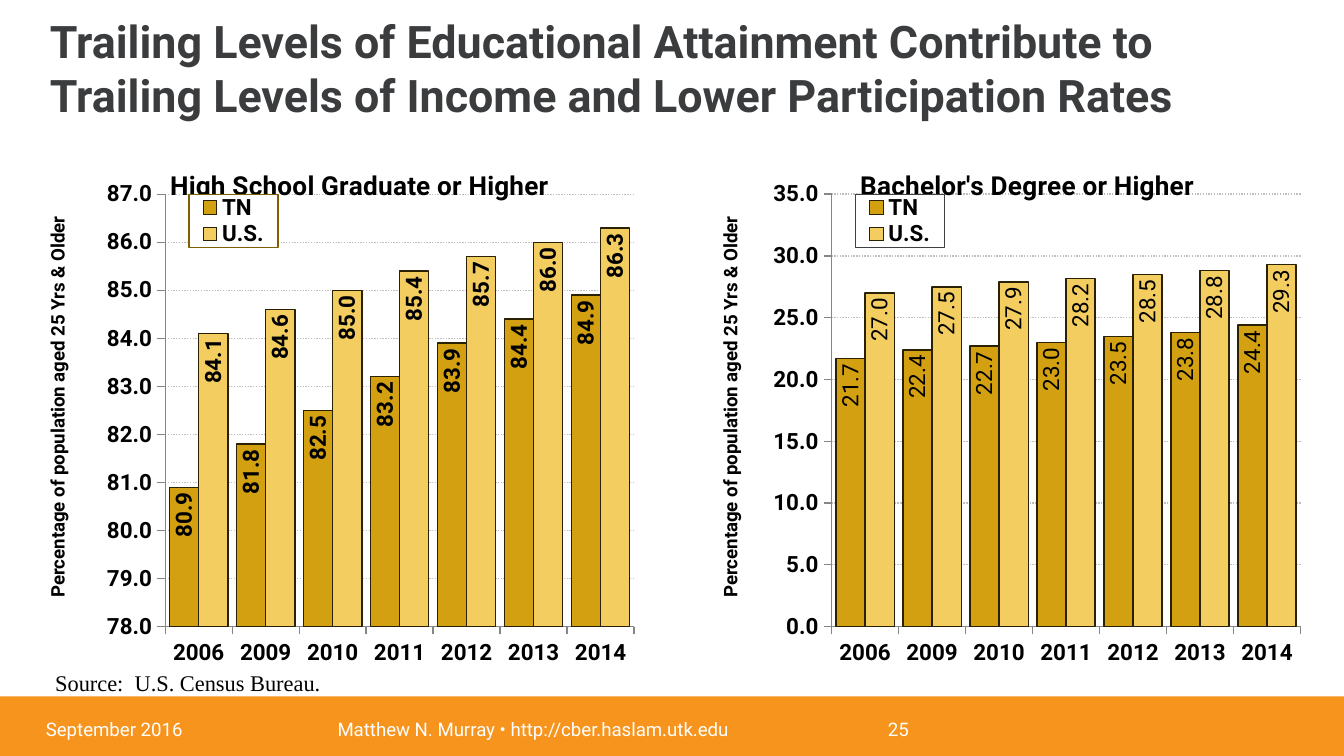
from pptx import Presentation
from pptx.chart.data import CategoryChartData
from pptx.dml.color import RGBColor
from pptx.enum.chart import XL_CHART_TYPE, XL_LABEL_POSITION, XL_LEGEND_POSITION, XL_TICK_MARK
from pptx.enum.dml import MSO_LINE
from pptx.enum.shapes import MSO_SHAPE
from pptx.enum.text import MSO_ANCHOR, MSO_AUTO_SIZE, PP_ALIGN
from pptx.oxml import parse_xml
from pptx.oxml.ns import nsdecls, qn
from pptx.util import Pt

COLUMNS = XL_CHART_TYPE.COLUMN_CLUSTERED
INSIDE_END = XL_LABEL_POSITION.INSIDE_END
LEGEND_TOP = XL_LEGEND_POSITION.TOP
TICK_OUT, TICK_NONE = XL_TICK_MARK.OUTSIDE, XL_TICK_MARK.NONE
DOTTED = MSO_LINE.ROUND_DOT
RECT = MSO_SHAPE.RECTANGLE
TOP, MIDDLE = MSO_ANCHOR.TOP, MSO_ANCHOR.MIDDLE
NO_FIT = MSO_AUTO_SIZE.NONE
LEFT, CENTER, RIGHT = PP_ALIGN.LEFT, PP_ALIGN.CENTER, PP_ALIGN.RIGHT


class Theme:
    font, serif = "Roboto", "Times New Roman"
    title, text = RGBColor(0x3B, 0x3C, 0x3E), RGBColor(0, 0, 0)
    white, footer = RGBColor(255, 255, 255), RGBColor(0xF7, 0x94, 0x1E)
    bars = RGBColor(0xD2, 0xA0, 0x10), RGBColor(0xF3, 0xCD, 0x60)
    outline, axis = RGBColor(0x2A, 0x20, 0x03), RGBColor(0x86, 0x86, 0x86)
    grid = RGBColor(0xBF, 0xBF, 0xBF)
    title_size, chart_title_size, chart_size, small_size = Pt(24), Pt(14), Pt(12), Pt(10)


def add_text(s, text, box, size, color, font=Theme.font, align=LEFT, anchor=TOP, bold=False):
    tf = s.shapes.add_textbox(*(Pt(v) for v in box)).text_frame
    tf.word_wrap = True
    tf.vertical_anchor = anchor
    p = tf.paragraphs[0]
    p.text = text
    p.alignment = align
    r = p.runs[0]
    r.font.name, r.font.size, r.font.bold = font, size, bold
    r.font.color.rgb = color
    return tf


def place(parent, index, **fractions):
    """Set a manual layout, in fractions of the chart, as child number index."""
    for old in parent.findall(qn("c:layout")):
        parent.remove(old)
    target = '<c:layoutTarget val="inner"/>' if parent.tag == qn("c:plotArea") else ""
    modes = '<c:xMode val="edge"/><c:yMode val="edge"/>'
    values = "".join(f'<c:{k} val="{v}"/>' for k, v in fractions.items())
    parent.insert(index, parse_xml(
        f'<c:layout {nsdecls("c")}><c:manualLayout>{target}{modes}{values}'
        '</c:manualLayout></c:layout>'))


prs = Presentation()
prs.slide_width, prs.slide_height = Pt(720), Pt(405)
s = prs.slides.add_slide(prs.slide_layouts[5])

# Footer band
band = s.shapes.add_shape(RECT, Pt(0), Pt(373), Pt(720), Pt(32))
band.shadow.inherit = False
band.fill.solid()
band.fill.fore_color.rgb = Theme.footer
band.line.fill.background()

# Title
title = s.shapes.title
title.left, title.top, title.width, title.height = Pt(19.5), Pt(2), Pt(682.5), Pt(68)
tf = title.text_frame
tf.text = ("Trailing Levels of Educational Attainment Contribute to "
           "Trailing Levels of Income and Lower Participation Rates")
tf.word_wrap, tf.auto_size, tf.vertical_anchor = True, NO_FIT, MIDDLE
p = tf.paragraphs[0]
p.alignment = LEFT
r = p.runs[0]
r.font.name, r.font.size, r.font.bold = Theme.font, Theme.title_size, True
r.font.color.rgb = Theme.title

# Charts: left, axis caption left, title, title x, axis range and step, bold labels, legend border, values
years = ["2006", "2009", "2010", "2011", "2012", "2013", "2014"]
panels = [
    (34.5, 21, "High School Graduate or Higher", 0.17, (78, 87, 1), True, RGBColor(0x7F, 0x60, 0),
     {"TN": (80.9, 81.8, 82.5, 83.2, 83.9, 84.4, 84.9),
      "U.S.": (84.1, 84.6, 85, 85.4, 85.7, 86, 86.3)}),
    (391.5, 381.5, "Bachelor's Degree or Higher", 0.21, (0, 35, 5), False, RGBColor(0x40, 0x40, 0x40),
     {"TN": (21.7, 22.4, 22.7, 23, 23.5, 23.8, 24.4),
      "U.S.": (27, 27.5, 27.9, 28.2, 28.5, 28.8, 29.3)}),
]
for left, caption_left, heading, heading_x, scale, bold_labels, border, values in panels:
    data = CategoryChartData(number_format="0.0")
    data.categories = years
    for name, numbers in values.items():
        data.add_series(name, numbers)
    chart = s.shapes.add_chart(COLUMNS, Pt(left), Pt(75.5), Pt(318), Pt(286), data).chart
    chart.font.name, chart.font.size = Theme.font, Theme.chart_size
    chart.font.color.rgb = Theme.text

    # Chart title over the plot
    chart.has_title = True
    p = chart.chart_title.text_frame.paragraphs[0]
    p.text = heading
    r = p.runs[0]
    r.font.name, r.font.size, r.font.bold = Theme.font, Theme.chart_title_size, True
    r.font.color.rgb = Theme.text
    title_xml = chart.element.xpath("c:chart/c:title")[0]
    title_xml.find(qn("c:overlay")).set("val", "1")
    place(title_xml, 1, x=heading_x, y=0.04)
    place(chart.element.xpath("c:chart/c:plotArea")[0], 0, x=0.17, y=0.1, w=0.79, h=0.81)

    # Boxed legend
    chart.has_legend = True
    legend = chart.legend
    legend.position, legend.include_in_layout = LEGEND_TOP, False
    legend.font.bold = True
    legend.font.name, legend.font.size = Theme.font, Theme.chart_size
    legend_xml = chart.element.xpath("c:chart/c:legend")[0]
    place(legend_xml, 1, x=0.21, y=0.1, w=0.15, h=0.1)
    legend_xml.find(qn("c:overlay")).addnext(parse_xml(
        f'<c:spPr {nsdecls("c", "a")}><a:solidFill><a:srgbClr val="{Theme.white}"/></a:solidFill>'
        f'<a:ln w="9525"><a:solidFill><a:srgbClr val="{border}"/></a:solidFill></a:ln></c:spPr>'))

    # Axes
    for axis in (chart.category_axis, chart.value_axis):
        axis.major_tick_mark, axis.minor_tick_mark = TICK_OUT, TICK_NONE
        axis.tick_labels.font.bold = True
        axis.tick_labels.font.name, axis.tick_labels.font.size = Theme.font, Theme.chart_size
        axis.format.line.color.rgb = Theme.axis
    axis = chart.value_axis
    axis.minimum_scale, axis.maximum_scale, axis.major_unit = scale
    axis.tick_labels.number_format = "0.0"
    axis.tick_labels.number_format_is_linked = False
    grid = axis.major_gridlines.format.line
    grid.color.rgb, grid.width, grid.dash_style = Theme.grid, Pt(0.75), DOTTED

    # Columns with upright labels
    plot = chart.plots[0]
    plot.gap_width, plot.overlap, plot.vary_by_categories = 30, 0, False
    for series, color in zip(plot.series, Theme.bars):
        series.format.fill.solid()
        series.format.fill.fore_color.rgb = color
        series.format.line.color.rgb = Theme.outline
        series.format.line.width = Pt(0.75)
        labels = series.data_labels
        labels.show_value, labels.position = True, INSIDE_END
        labels.number_format, labels.number_format_is_linked = "0.0", False
        labels.font.name, labels.font.size, labels.font.bold = Theme.font, Theme.chart_size, bold_labels
        labels.font.color.rgb = Theme.text
    for body in chart.element.xpath(".//c:ser/c:dLbls/c:txPr/a:bodyPr"):
        body.set("rot", "-5400000")
        body.set("vert", "horz")

    # Axis caption, read upwards
    tf = add_text(s, "Percentage of population aged 25 Yrs & Older", (caption_left, 100, 26.5, 236),
                  Theme.small_size, Theme.text, align=CENTER, bold=True)
    tf._txBody.bodyPr.set("vert", "vert270")

# Source and footer texts
add_text(s, "Source:  U.S. Census Bureau.", (22.5, 355, 369, 21.5), Theme.chart_size, Theme.text, Theme.serif)
for text, left, width, align in [
    ("September 2016", 17.5, 110, LEFT),
    ("Matthew N. Murray • http://cber.haslam.utk.edu", 113, 345, CENTER),
    ("25", 458, 36, RIGHT),
]:
    add_text(s, text, (left, 380, width, 21.5), Theme.small_size, Theme.white, align=align, anchor=MIDDLE)

prs.save("out.pptx")
